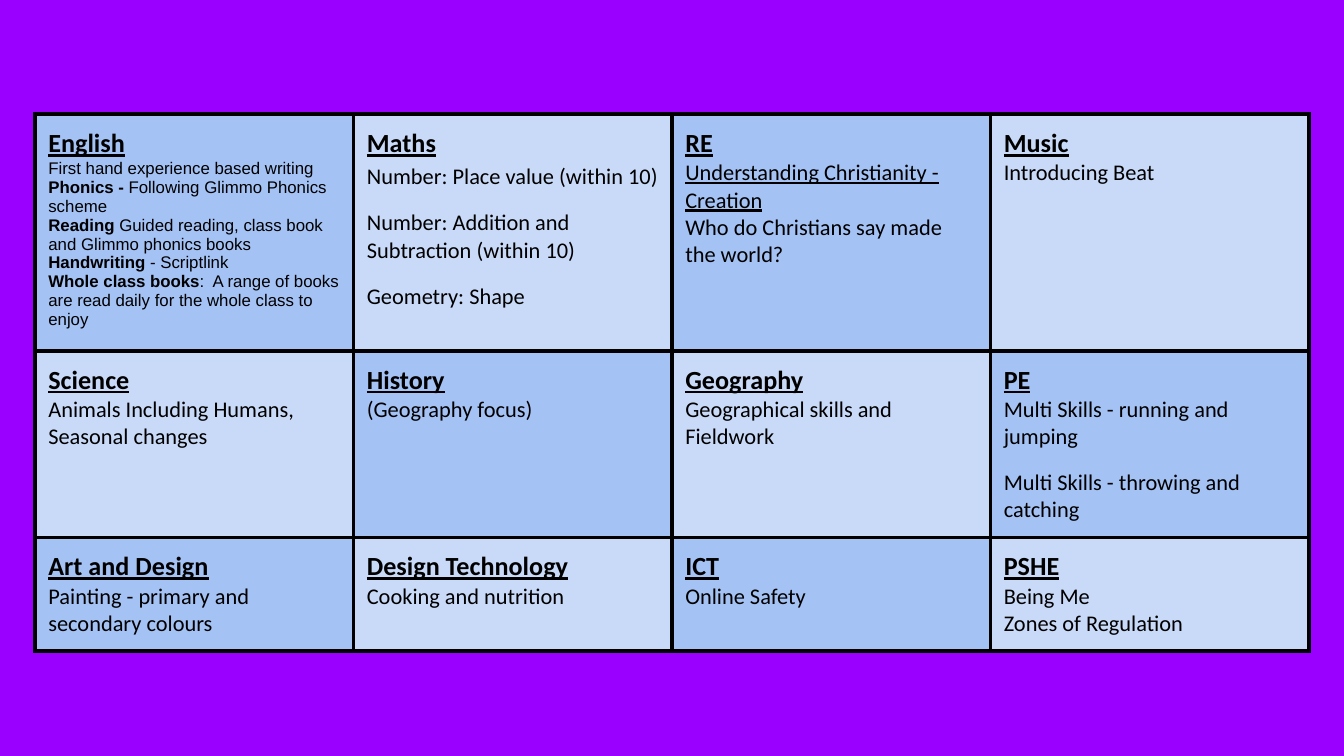
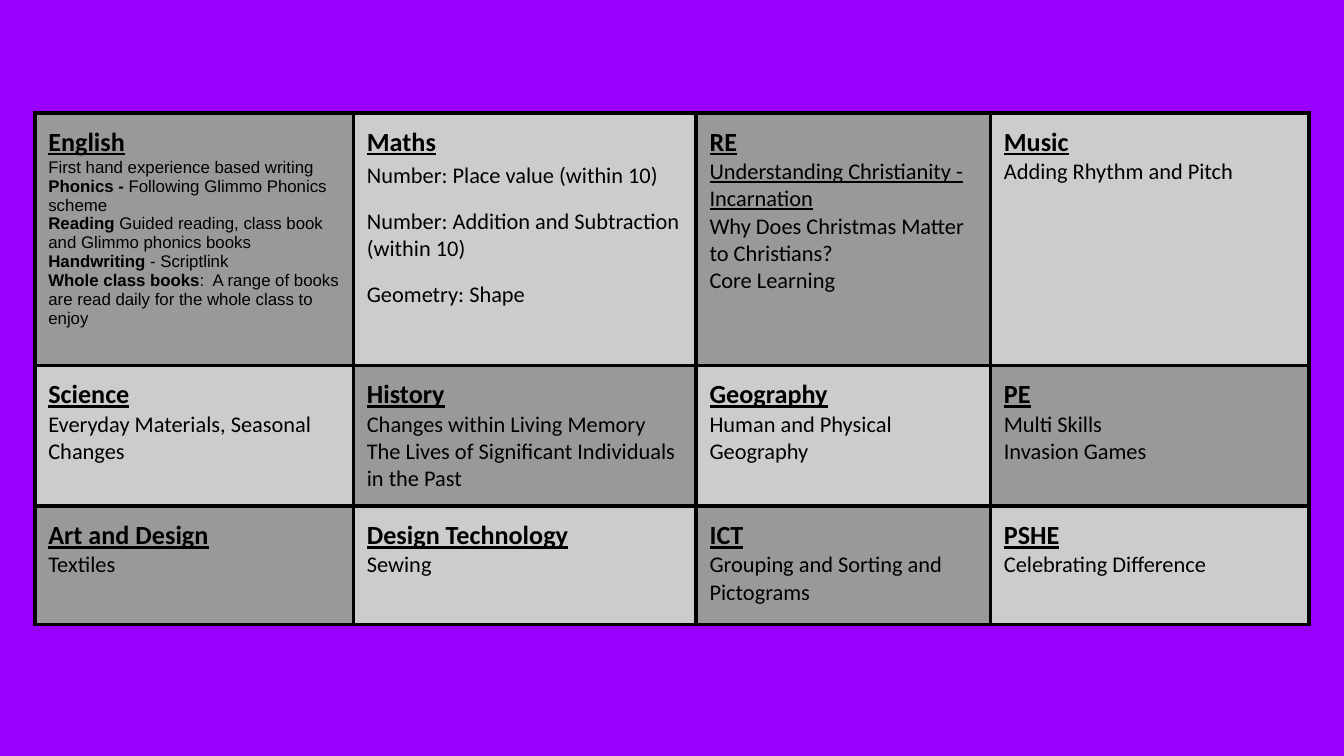
from dataclasses import dataclass

from lxml import etree
from pptx import Presentation
from pptx.dml.color import RGBColor
from pptx.oxml.ns import qn
from pptx.util import Inches, Pt

PURPLE = RGBColor(0x99, 0x00, 0xFF)
BLACK = RGBColor(0x00, 0x00, 0x00)
BLUES = RGBColor(0xA4, 0xC2, 0xF4), RGBColor(0xC9, 0xDA, 0xF8)
GREYS = RGBColor(0x99, 0x99, 0x99), RGBColor(0xCC, 0xCC, 0xCC)

WIDTH = 10
HEIGHT = WIDTH * 9 / 16
LEFT = 0.26
INSET = Inches(0.1)
BORDER = Pt(2.25)
BLANK = 6  # layout index


@dataclass
class Line:
    """One body paragraph; lead is its bold opening, if any."""
    text: str
    lead: str = ""
    size: int = 12
    face: str = "Calibri"
    under: bool = False
    before: int = 0
    after: int = 0
    space: float = 1.0


def small(text, lead=""):
    return Line(text, lead, size=9, face="Arial")


# Subjects in grid order, shared by both terms
SUBJECTS = [
    ["English", "Maths", "RE", "Music"],
    ["Science", "History", "Geography", "PE"],
    ["Art and Design", "Design Technology", "ICT", "PSHE"],
]

ENGLISH = [
    [small("First hand experience based writing "),
     small(" Following Glimmo Phonics scheme", "Phonics -")],
    small("Guided reading, class book and Glimmo phonics books", "Reading "),
    small(" - Scriptlink", "Handwriting"),
    small(":  A range of books are read daily for the whole class to enjoy",
          "Whole class books"),
]

MATHS = [
    Line("Number: Place value (within 10)", space=1.15),
    Line("Number: Addition and Subtraction (within 10)", before=10),
    Line("Geometry: Shape", before=10),
]

FIRST = [
    [ENGLISH, MATHS,
     [Line("Understanding Christianity - Creation", under=True),
      Line("Who do Christians say made the world?")],
     [Line("Introducing Beat")]],
    [[Line("Animals Including Humans, Seasonal changes")],
     [Line("(Geography focus)")],
     [Line("Geographical skills and Fieldwork")],
     [Line("Multi Skills - running and jumping"),
      Line("Multi Skills - throwing and catching", before=10, after=10)]],
    [[Line("Painting - primary and secondary colours")],
     [Line("Cooking and nutrition")],
     [Line("Online Safety")],
     [Line("Being Me"), Line("Zones of Regulation")]],
]

SECOND = [
    [ENGLISH, MATHS,
     [Line("Understanding Christianity - Incarnation", under=True),
      Line("Why Does Christmas Matter to Christians?"),
      Line("Core Learning")],
     [Line("Adding Rhythm and Pitch")]],
    [[Line("Everyday Materials, Seasonal Changes")],
     [Line("Changes within Living Memory"),
      Line("The Lives of Significant Individuals in the Past")],
     [Line("Human and Physical Geography")],
     [Line("Multi Skills"), Line("Invasion Games")]],
    [[Line("Textiles")],
     [Line("Sewing")],
     [Line("Grouping and Sorting and Pictograms")],
     [Line("Celebrating Difference")]],
]


def set_font(font, size, face, under):
    font.size = Pt(size)
    font.name = face
    font.underline = under
    font.color.rgb = BLACK


def add_run(para, text, bold):
    run = para.add_run()
    run.text = text
    run.font.bold = bold


def add_line(frame, item):
    """Add a paragraph from one Line, or from several that flow together."""
    parts = item if isinstance(item, list) else [item]
    style = parts[0]
    para = frame.add_paragraph()
    set_font(para.font, style.size, style.face, style.under)
    para.space_before = Pt(style.before)
    para.space_after = Pt(style.after)
    para.line_spacing = style.space
    for part in parts:
        if part.lead:
            add_run(para, part.lead, True)
        add_run(para, part.text, False)
    # Runs carry the style too, so that every viewer applies it
    for run in para.runs:
        set_font(run.font, style.size, style.face, style.under)


def add_head(frame, text):
    para = frame.paragraphs[0]
    add_run(para, text, True)
    for font in (para.font, para.runs[0].font):
        set_font(font, 14, "Calibri", True)


def add_edges(cell):
    props = cell._tc.get_or_add_tcPr()
    for side in ("lnL", "lnR", "lnT", "lnB"):
        edge = etree.SubElement(props, qn(f"a:{side}"), w=str(int(BORDER)))
        fill = etree.SubElement(edge, qn("a:solidFill"))
        etree.SubElement(fill, qn("a:srgbClr"), val=str(BLACK))


def fill_cell(cell, head, body, color):
    cell.margin_left = cell.margin_right = INSET
    cell.margin_top = cell.margin_bottom = INSET
    add_edges(cell)
    cell.fill.solid()
    cell.fill.fore_color.rgb = color
    add_head(cell.text_frame, head)
    for item in body:
        add_line(cell.text_frame, item)


def add_term(deck, topics, shades, top, cols, rows):
    """Add a slide whose subject grid alternates two shades."""
    slide = deck.slides.add_slide(deck.slide_layouts[BLANK])
    slide.background.fill.solid()
    slide.background.fill.fore_color.rgb = PURPLE
    table = slide.shapes.add_table(
        len(rows), len(cols), Inches(LEFT), Inches(top),
        Inches(sum(cols)), Inches(sum(rows))).table
    table.first_row = table.horz_banding = False
    for col, width in zip(table.columns, cols):
        col.width = Inches(width)
    for r, height in enumerate(rows):
        table.rows[r].height = Inches(height)
        for c in range(len(cols)):
            fill_cell(table.cell(r, c), SUBJECTS[r][c], topics[r][c],
                      shades[(r + c) % 2])


def main():
    deck = Presentation()
    deck.slide_width = Inches(WIDTH)
    deck.slide_height = Inches(HEIGHT)
    add_term(deck, FIRST, BLUES, 0.85, [2.37] * 4, [1.76, 1.39, 0.84])
    add_term(deck, SECOND, GREYS, 0.84, [2.37, 2.55, 2.19, 2.37],
             [1.88, 1.04, 0.88])
    deck.save("out.pptx")


if __name__ == "__main__":
    main()
